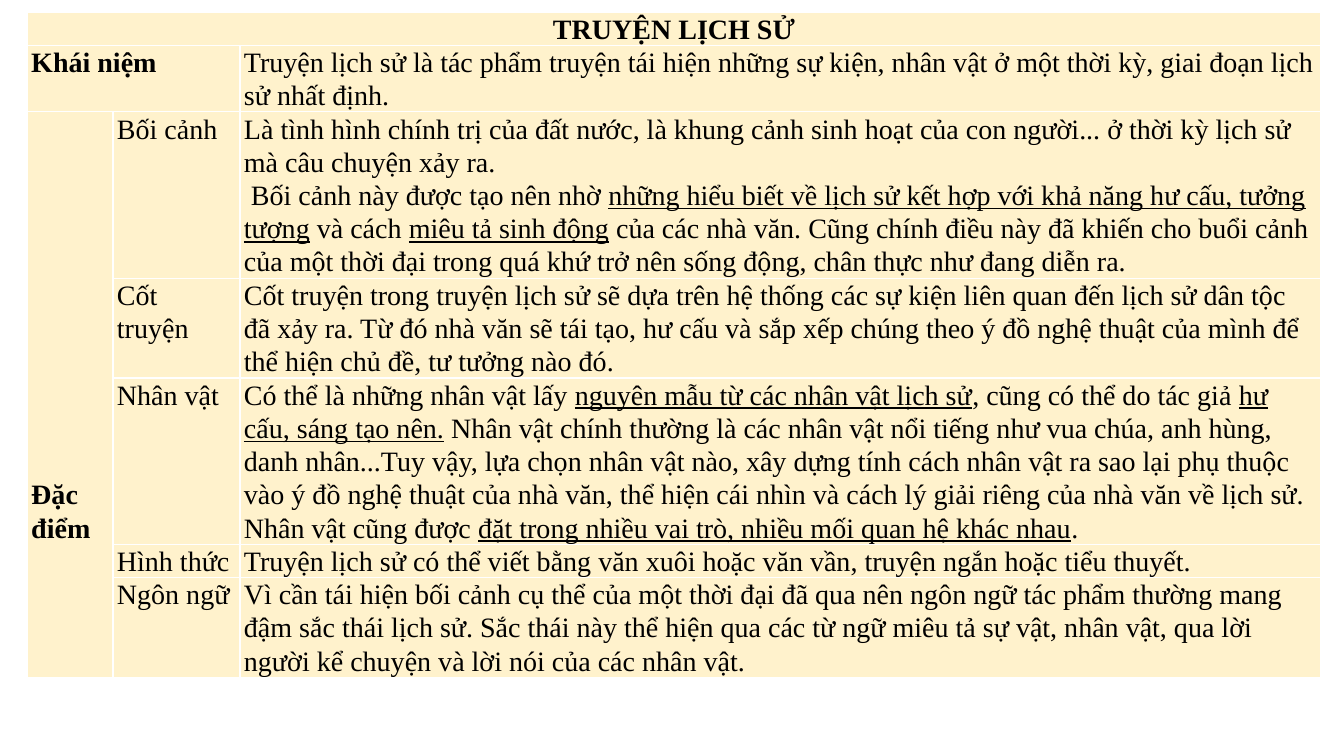
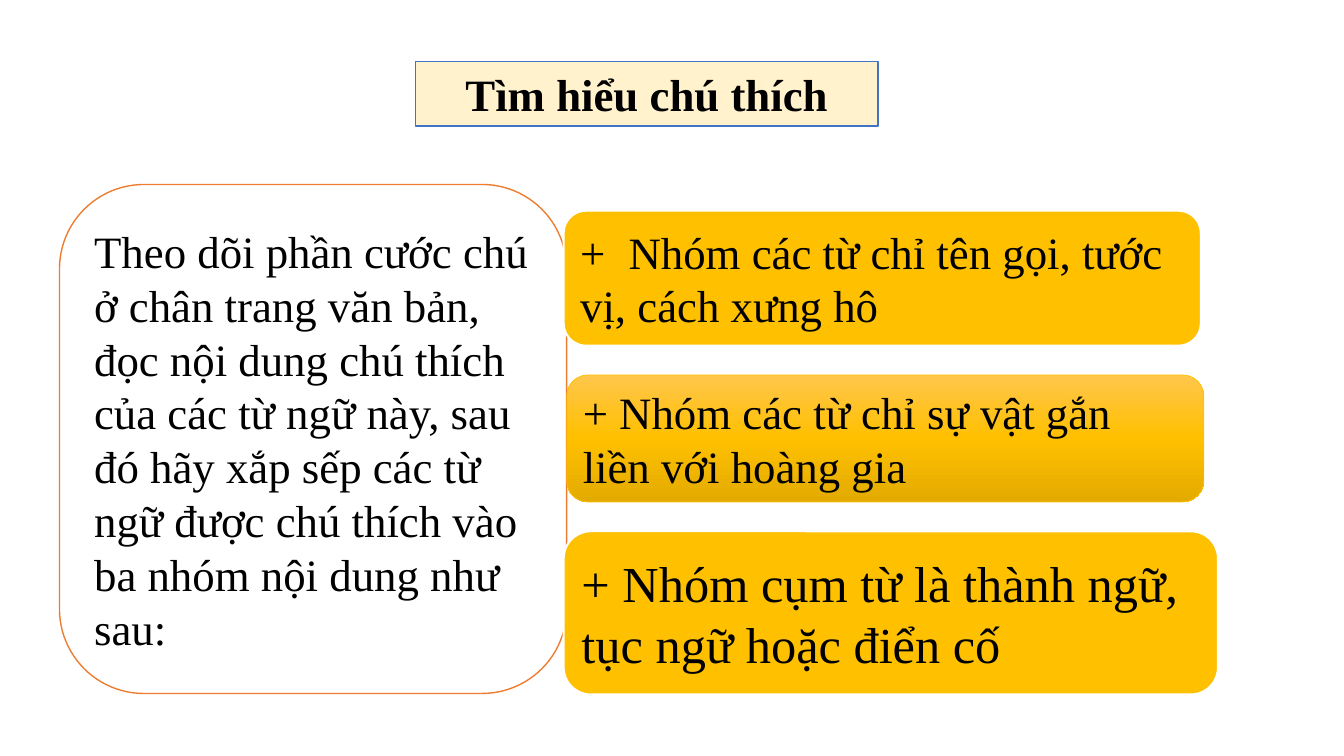
import copy

import lxml.etree
import pptx
import pptx.dml.color
import pptx.enum.shapes
import pptx.enum.text
import pptx.oxml.ns
import pptx.util

Inches = pptx.util.Inches
Pt = pptx.util.Pt
SHAPE = pptx.enum.shapes.MSO_SHAPE
ALIGN = pptx.enum.text.PP_ALIGN
ANCHOR = pptx.enum.text.MSO_ANCHOR
qn = pptx.oxml.ns.qn

COLORS = {
    name: pptx.dml.color.RGBColor.from_string(value)
    for name, value in {
        "text": "000000", "white": "FFFFFF", "cream": "FFF2CC",
        "blue": "4472C4", "orange": "ED7D31", "gold": "FFC000",
        "light gold": "FFC64B", "dark gold": "E3AB00",
    }.items()
}
FONT = "Times New Roman"


def write(frame, text, size, bold=False, align=ALIGN.LEFT, spacing=None, tab=None):
    """Fill a text frame: newlines part paragraphs, underscores enclose underlined words."""
    frame.word_wrap = True
    for index, line in enumerate(text.split("\n")):
        para = frame.paragraphs[0] if index == 0 else frame.add_paragraph()
        para.alignment = align
        if spacing:
            para.line_spacing = spacing
        if tab:
            tabs = lxml.etree.SubElement(para._p.get_or_add_pPr(), qn("a:tabLst"))
            lxml.etree.SubElement(tabs, qn("a:tab"), pos=str(tab), algn="l")
        para.font.name = FONT
        para.font.size = Pt(size)
        para.font.bold = bold
        para.font.color.rgb = COLORS["text"]
        for part, words in enumerate(line.split("_")):
            if words:
                span = para.add_run()
                span.text = words
                if part % 2:
                    span.font.underline = True


def add_box(page, kind, place, fill, line, line_width, text, size, **style):
    box = page.shapes.add_shape(kind, *(Inches(length) for length in place))
    box.shadow.inherit = False
    box.fill.solid()
    box.fill.fore_color.rgb = COLORS[fill]
    box.line.color.rgb = COLORS[line]
    box.line.width = Pt(line_width)
    box.text_frame.vertical_anchor = ANCHOR.MIDDLE
    write(box.text_frame, text, size, **style)
    return box


deck = pptx.Presentation()
deck.slide_width = Inches(13.33)
deck.slide_height = Inches(7.5)
blank = deck.slide_layouts[6]

# Slide 1: features of historical stories
page = deck.slides.add_slide(blank)
ROWS = [
    ("TRUYỆN LỊCH SỬ", "", ""),
    ("Khái niệm", "",
     "Truyện lịch sử là tác phẩm truyện tái hiện những sự kiện, nhân vật ở một thời kỳ, "
     "giai đoạn lịch sử nhất định."),
    ("Đặc điểm", "Bối cảnh",
     "Là tình hình chính trị của đất nước, là khung cảnh sinh hoạt của con người... ở thời kỳ "
     "lịch sử mà câu chuyện xảy ra.\n"
     " Bối cảnh này được tạo nên nhờ _những hiểu biết về lịch sử kết hợp với khả năng hư cấu, "
     "tưởng tượng_ và cách _miêu tả sinh động_ của các nhà văn. Cũng chính điều này đã khiến "
     "cho buổi cảnh của một thời đại trong quá khứ trở nên sống động, chân thực như đang diễn ra."),
    ("", "Cốt truyện",
     "Cốt truyện trong truyện lịch sử sẽ dựa trên hệ thống các sự kiện liên quan đến lịch sử "
     "dân tộc đã xảy ra. Từ đó nhà văn sẽ tái tạo, hư cấu và sắp xếp chúng theo ý đồ nghệ thuật "
     "của mình để thể hiện chủ đề, tư tưởng nào đó."),
    ("", "Nhân vật",
     "Có thể là những nhân vật lấy _nguyên mẫu từ các nhân vật lịch sử_, cũng có thể do tác giả "
     "_hư cấu, sáng tạo nên._ Nhân vật chính thường là các nhân vật nổi tiếng như vua chúa, "
     "anh hùng, danh nhân...Tuy vậy, lựa chọn nhân vật nào, xây dựng tính cách nhân vật ra sao "
     "lại phụ thuộc vào ý đồ nghệ thuật của nhà văn, thể hiện cái nhìn và cách lý giải riêng "
     "của nhà văn về lịch sử. Nhân vật cũng được _đặt trong nhiều vai trò, nhiều mối quan hệ "
     "khác nhau_."),
    ("", "Hình thức",
     "Truyện lịch sử có thể viết bằng văn xuôi hoặc văn vần, truyện ngắn hoặc tiểu thuyết."),
    ("", "Ngôn ngữ",
     "Vì cần tái hiện bối cảnh cụ thể của một thời đại đã qua nên ngôn ngữ tác phẩm thường mang "
     "đậm sắc thái lịch sử. Sắc thái này thể hiện qua các từ ngữ miêu tả sự vật, nhân vật, "
     "qua lời người kể chuyện và lời nói của các nhân vật."),
]
LINES_PER_ROW = [1, 2, 5, 3, 5, 1, 3]
LINE_HEIGHT = 0.33
COLUMN_WIDTHS = [0.85, 1.26, 10.72]

table = page.shapes.add_table(
    len(ROWS), len(COLUMN_WIDTHS), Inches(0.27), Inches(0.12),
    Inches(sum(COLUMN_WIDTHS)), Inches(LINE_HEIGHT * sum(LINES_PER_ROW))).table
table.horz_banding = False
for column, width in zip(table.columns, COLUMN_WIDTHS):
    column.width = Inches(width)
for row, lines in zip(table.rows, LINES_PER_ROW):
    row.height = Inches(LINE_HEIGHT * lines)

for row_index, texts in enumerate(ROWS):
    for column_index, text in enumerate(texts):
        cell = table.cell(row_index, column_index)
        cell.fill.solid()
        cell.fill.fore_color.rgb = COLORS["cream"]
        cell.margin_left = cell.margin_right = Inches(0.04)
        cell.margin_top = cell.margin_bottom = 0
        if text:
            write(cell.text_frame, text, 20, bold=column_index == 0, spacing=1.07,
                  align=ALIGN.CENTER if row_index == 0 else ALIGN.LEFT)

table.cell(0, 0).merge(table.cell(0, 2))
table.cell(1, 0).merge(table.cell(1, 1))
features = table.cell(2, 0)
features.merge(table.cell(6, 0))
features.margin_top = Inches(11 * LINE_HEIGHT)

# Slide 2: sorting the footnotes
page = deck.slides.add_slide(blank)
add_box(page, SHAPE.RECTANGLE, (4.12, 0.61, 4.59, 0.64), "cream", "blue", 1,
        "Tìm hiểu chú thích", 32, bold=True, align=ALIGN.CENTER)
add_box(page, SHAPE.ROUNDED_RECTANGLE, (0.59, 1.83, 5.03, 5.05), "white", "orange", 1,
        "Theo dõi phần cước chú ở chân trang văn bản, đọc nội dung chú thích của các từ ngữ này, "
        "sau đó hãy xắp sếp các từ ngữ được chú thích vào ba nhóm nội dung như sau:", 32)

GROUPS = [
    ((5.59, 2.09, 6.32, 1.34), "white", 1.5, 32, Inches(0.48),
     "+\tNhóm các từ chỉ tên gọi, tước vị, cách xưng hô"),
    ((5.62, 3.72, 6.32, 1.26), "gold", 0.5, 32, None,
     "+ Nhóm các từ chỉ sự vật gắn liền với hoàng gia"),
    ((5.59, 5.27, 6.49, 1.62), "white", 1.5, 36, None,
     "+ Nhóm cụm từ là thành ngữ, tục ngữ hoặc điển cố"),
]
group_boxes = [
    add_box(page, SHAPE.ROUNDED_RECTANGLE, place, "gold", line, line_width, text, size, tab=tab)
    for place, line, line_width, size, tab, text in GROUPS
]

shaded = group_boxes[1]
shaded.fill.gradient()
shaded.fill.gradient_angle = 270
stop_list = shaded._element.spPr.find(".//" + qn("a:gsLst"))
stop_list.insert(1, copy.deepcopy(stop_list[0]))
for stop, position, color in zip(shaded.fill.gradient_stops, (0, 0.5, 1),
                                 ("light gold", "gold", "dark gold")):
    stop.position = position
    stop.color.rgb = COLORS[color]

deck.save("out.pptx")
